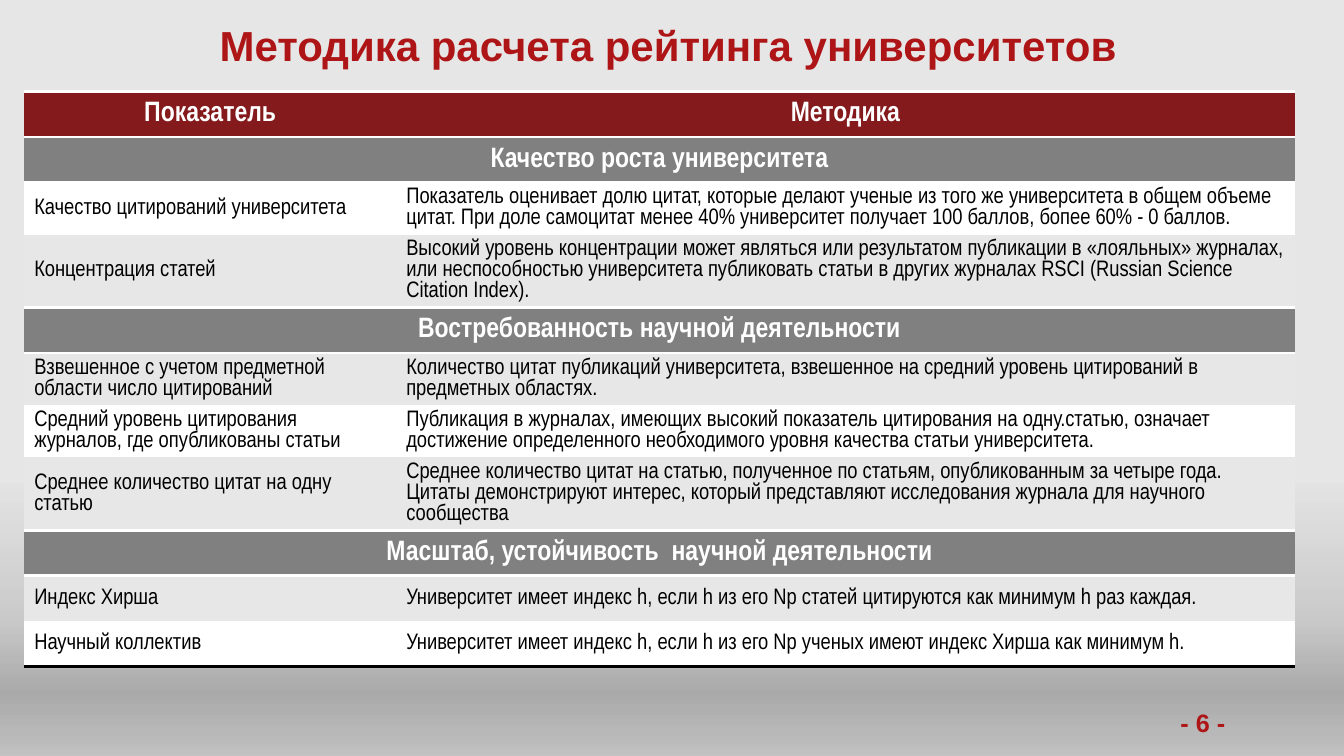
import pptx
import pptx.dml.color
import pptx.enum.shapes
import pptx.enum.text
import pptx.oxml
import pptx.oxml.ns
import pptx.util
from lxml import etree
from pptx.util import Inches

ALIGN = pptx.enum.text.PP_ALIGN
MIDDLE = pptx.enum.text.MSO_ANCHOR.MIDDLE


class Theme:
    background = "E7E6E6"
    accent = "AE1517"
    header = "851A1C"
    section = "808080"
    white = "FFFFFF"
    band = "E7E7E7"
    black = "000000"
    title = dict(name="Arial", size=30, bold=True, color=accent)
    number = dict(name="Arial", size=18, bold=True, color=accent)
    heading = dict(name="Arial Narrow", size=20, bold=True, color=white)
    body = dict(name="Arial Narrow", size=16, bold=False, color=black)
    heading_format = dict(alignment=ALIGN.CENTER)
    body_format = dict(alignment=ALIGN.LEFT, line_spacing=pptx.util.Pt(15))
    rule = 2.25
    last_rule = 2
    # position %, opacity %
    shade = [(0, 0), (51, 12), (77, 26), (100, 15)]
    no_table_style = "{2D5ABB26-0587-4C30-8999-92F81FD0307C}"


HEADER = ("Показатель", "Методика")
# section title, fills of its rows, rows
SECTIONS = [
    ("Качество роста университета", (Theme.white, Theme.band), [
        ("Качество цитирований университета",
         "Показатель оценивает долю цитат, которые делают ученые из того же университета в общем "
         "объеме цитат. При доле самоцитат менее 40% университет получает 100 баллов, бопее 60% "
         "- 0 баллов."),
        ("Концентрация статей",
         "Высокий уровень концентрации может являться или результатом публикации в «лояльных» "
         "журналах, или неспособностью университета публиковать статьи в других журналах RSCI "
         "(Russian Science Citation Index)."),
    ]),
    ("Востребованность научной деятельности", (Theme.band, Theme.white, Theme.band), [
        ("Взвешенное с учетом предметной области число цитирований",
         "Количество цитат публикаций университета, взвешенное на средний уровень цитирований "
         "в предметных областях."),
        ("Средний уровень цитирования журналов, где опубликованы статьи",
         "Публикация в журналах, имеющих высокий показатель цитирования на одну.статью, означает "
         "достижение определенного необходимого уровня качества статьи университета."),
        ("Среднее количество цитат на одну статью",
         "Среднее количество цитат на статью, полученное по статьям, опубликованным за четыре "
         "года. Цитаты демонстрируют интерес, который представляют исследования журнала для "
         "научного сообщества"),
    ]),
    ("Масштаб, устойчивость  научной деятельности", (Theme.band, Theme.white), [
        ("Индекс Хирша",
         "Университет имеет индекс h, если h из его Np статей цитируются как минимум h раз каждая."),
        ("Научный коллектив",
         "Университет имеет индекс h, если h из его Np ученых имеют индекс Хирша как минимум h."),
    ]),
]


def rgb(value):
    return pptx.dml.color.RGBColor.from_string(value)


def write(frame, text, style, **paragraph_format):
    para = frame.paragraphs[0]
    for name, value in paragraph_format.items():
        setattr(para, name, value)
    span = para.add_run()
    span.text = text
    font = dict(style, size=pptx.util.Pt(style["size"]))
    span.font.color.rgb = rgb(font.pop("color"))
    for name, value in font.items():
        setattr(span.font, name, value)


def add_text(page, place, text, style, frame_format, **paragraph_format):
    box = page.shapes.add_textbox(*map(Inches, place))
    for name, value in frame_format.items():
        setattr(box.text_frame, name, value)
    write(box.text_frame, text, style, **paragraph_format)


def add_shade(page, place):
    band = page.shapes.add_shape(pptx.enum.shapes.MSO_SHAPE.RECTANGLE, *map(Inches, place))
    band.shadow.inherit = False
    band.line.fill.background()
    stops = "".join(
        f'<a:gs pos="{position * 1000}"><a:srgbClr val="{Theme.black}">'
        f'<a:alpha val="{opacity * 1000}"/></a:srgbClr></a:gs>'
        for position, opacity in Theme.shade)
    gradient = pptx.oxml.parse_xml(
        f'<a:gradFill {pptx.oxml.ns.nsdecls("a")} rotWithShape="1"><a:gsLst>{stops}</a:gsLst>'
        '<a:lin ang="5400000" scaled="0"/></a:gradFill>')
    geometry = band.element.spPr.find(pptx.oxml.ns.qn("a:prstGeom"))
    geometry.addnext(gradient)


def add_border(cell, side, color, width):
    qn = pptx.oxml.ns.qn
    line = etree.SubElement(cell._tc.get_or_add_tcPr(), qn(f"a:ln{side}"),
                            w=str(pptx.util.Pt(width)))
    fill = etree.SubElement(line, qn("a:solidFill"))
    etree.SubElement(fill, qn("a:srgbClr"), val=color)


def format_cell(cell, fill, borders):
    for side, (color, width) in borders.items():
        add_border(cell, side, color, width)
    cell.fill.solid()
    cell.fill.fore_color.rgb = rgb(fill)
    cell.vertical_anchor = MIDDLE


def fill_row(row, texts, fill, style, paragraph_format, borders):
    for cell in row.cells:
        format_cell(cell, fill, borders)
    if len(texts) == 1:
        row.cells[0].merge(row.cells[1])
    for cell, text in zip(row.cells, texts):
        write(cell.text_frame, text, style, **paragraph_format)


def table_rows():
    """Yield texts, fill, text style, paragraph format and borders of each row."""
    rule = (Theme.white, Theme.rule)
    framed = dict(T=rule, B=rule)
    yield HEADER, Theme.header, Theme.heading, Theme.heading_format, framed
    for title, fills, rows in SECTIONS:
        yield (title,), Theme.section, Theme.heading, Theme.heading_format, framed
        last_section = title == SECTIONS[-1][0]
        closing = (Theme.black, Theme.last_rule) if last_section else rule
        for texts, fill in zip(rows, fills):
            borders = dict(B=closing) if texts == rows[-1] else {}
            yield texts, fill, Theme.body, Theme.body_format, borders


def add_method_table(page, left, top, widths, row_height):
    rows = list(table_rows())
    frame = page.shapes.add_table(len(rows), len(widths), Inches(left), Inches(top),
                                  Inches(sum(widths)), Inches(row_height * len(rows)))
    table = frame.table
    table.first_row = table.horz_banding = False
    table._tbl.tblPr.find(pptx.oxml.ns.qn("a:tableStyleId")).text = Theme.no_table_style
    for column, width in zip(table.columns, widths):
        column.width = Inches(width)
    for row, content in zip(table.rows, rows):
        row.height = Inches(row_height)
        fill_row(row, *content)


def main():
    deck = pptx.Presentation()
    deck.slide_width, deck.slide_height = Inches(13.33), Inches(7.5)
    page = deck.slides.add_slide(deck.slide_layouts[6])

    # Background with a dark band at the bottom
    page.background.fill.solid()
    page.background.fill.fore_color.rgb = rgb(Theme.background)
    add_shade(page, (0, 4.77, 13.33, 2.73))

    # Page number and title
    add_text(page, (11.61, 6.97, 0.82, 0.4), "- 6 -", Theme.number, dict(word_wrap=False))
    add_text(page, (0.2, 0.07, 12.86, 0.82), "Методика расчета рейтинга университетов",
             Theme.title, dict(word_wrap=True, vertical_anchor=MIDDLE),
             alignment=ALIGN.CENTER, line_spacing=0.9)

    # Indicators and methods
    add_method_table(page, 0.24, 0.91, (3.69, 8.91), 0.45)

    deck.save("out.pptx")


if __name__ == "__main__":
    main()
